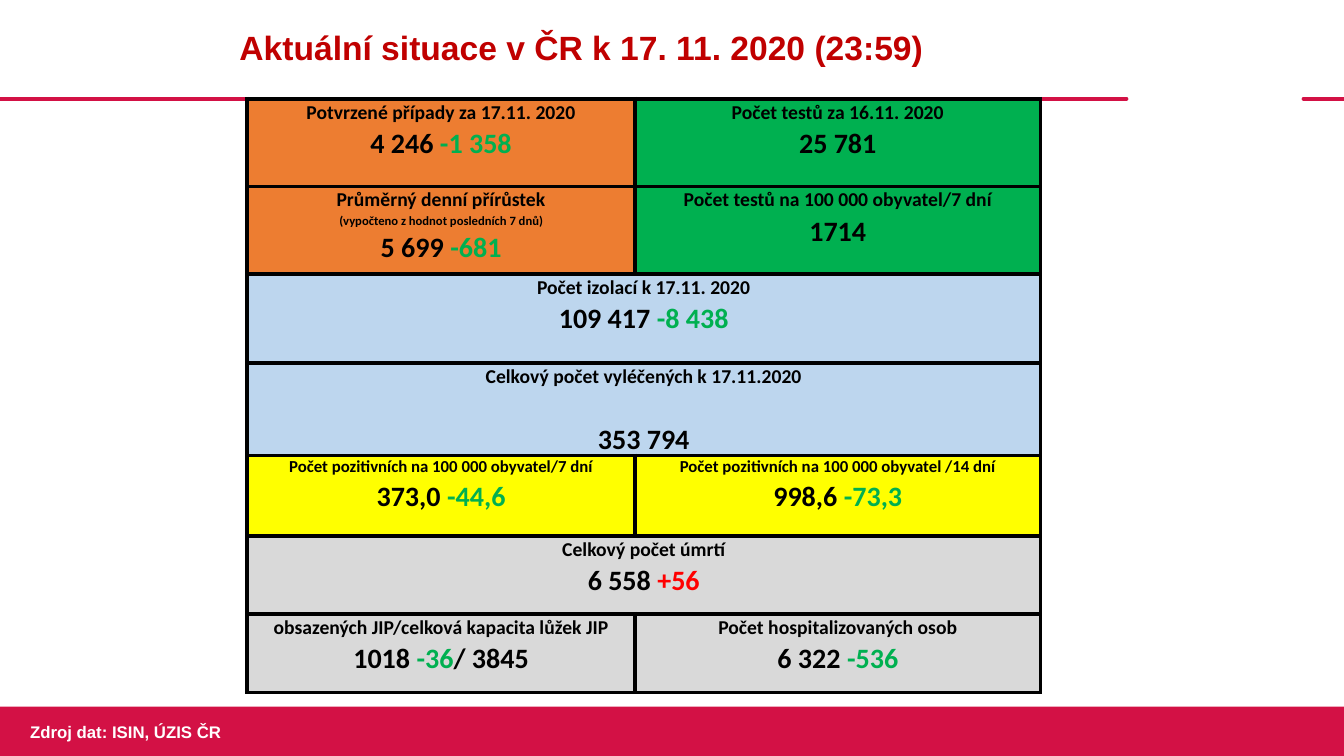
from dataclasses import dataclass

from lxml import etree
from pptx import Presentation
from pptx.dml.color import RGBColor
from pptx.enum.shapes import MSO_CONNECTOR, MSO_SHAPE
from pptx.enum.text import MSO_ANCHOR, PP_ALIGN
from pptx.oxml.ns import qn
from pptx.util import Inches, Pt

CENTER, LEFT = PP_ALIGN.CENTER, PP_ALIGN.LEFT
MIDDLE, TOP = MSO_ANCHOR.MIDDLE, MSO_ANCHOR.TOP
STRAIGHT, RECT = MSO_CONNECTOR.STRAIGHT, MSO_SHAPE.RECTANGLE

CRIMSON = RGBColor(0xD3, 0x11, 0x45)
DARK_RED = RGBColor(0xC0, 0x00, 0x00)
RED = RGBColor(0xFF, 0x00, 0x00)
GREEN = RGBColor(0x00, 0xB0, 0x50)
ORANGE = RGBColor(0xED, 0x7D, 0x31)
BLUE = RGBColor(0xBD, 0xD6, 0xEE)
YELLOW = RGBColor(0xFF, 0xFF, 0x00)
GREY = RGBColor(0xD9, 0xD9, 0xD9)
BLACK = RGBColor(0x00, 0x00, 0x00)
WHITE = RGBColor(0xFF, 0xFF, 0xFF)

WIDTH, HEIGHT = Inches(13.33), Inches(7.5)
RULE_Y = 13.07  # height of the header rule, in percent
COLS = [28.88, 30.16]
ROWS = [11.6, 11.6, 11.73, 12.27, 10.67, 10.27, 10.4]


@dataclass
class Part:
    text: str
    color: RGBColor = BLACK


@dataclass
class Tile:
    row: int
    col: int
    fill: RGBColor
    label: str
    value: list[Part]
    label_size: int = 14
    note: str = ""
    wide: bool = False
    value_spacing: float = 1.07
    after: int = 0


TILES = [
    Tile(0, 0, ORANGE, "Potvrzené případy za 17.11. 2020",
         [Part("4 246 "), Part("-1 358", GREEN)], after=12),
    Tile(0, 1, GREEN, "Počet testů za 16.11. 2020", [Part("25 781")], after=12),
    Tile(1, 0, ORANGE, "Průměrný denní přírůstek",
         [Part("5 699 "), Part("-681", GREEN)],
         note="(vypočteno z hodnot posledních 7 dnů)"),
    Tile(1, 1, GREEN, "Počet testů na 100 000 obyvatel/7 dní", [Part("1714")]),
    Tile(2, 0, BLUE, "Počet izolací k 17.11. 2020",
         [Part("109 417 "), Part("-8 438", GREEN)], wide=True),
    Tile(3, 0, BLUE, "Celkový počet vyléčených k 17.11.2020",
         [Part("353 794")], wide=True, value_spacing=2.0),
    Tile(4, 0, YELLOW, "Počet pozitivních na 100 000 obyvatel/7 dní",
         [Part("373,0 "), Part("-44,6", GREEN)], label_size=12),
    Tile(4, 1, YELLOW, "Počet pozitivních na 100 000 obyvatel /14 dní",
         [Part("998,6 "), Part("-73,3", GREEN)], label_size=12),
    Tile(5, 0, GREY, "Celkový počet úmrtí",
         [Part("6 558 "), Part("+56", RED)], wide=True),
    Tile(6, 0, GREY, "obsazených JIP/celková kapacita lůžek JIP",
         [Part("1018 "), Part("-36", GREEN), Part("/ 3845")]),
    Tile(6, 1, GREY, "Počet hospitalizovaných osob",
         [Part("6 322 "), Part("-536", GREEN)]),
]


def across(percent: float) -> int:
    return round(WIDTH * percent / 100)


def down(percent: float) -> int:
    return round(HEIGHT * percent / 100)


def write(p, parts: list[Part], size: int, font: str, align=CENTER,
          spacing: float = 1.0, after: int = 0) -> None:
    p.alignment = align
    p.line_spacing = spacing
    p.space_before, p.space_after = Pt(0), Pt(after)
    for part in parts:
        r = p.add_run()
        r.text = part.text
        r.font.name, r.font.size, r.font.bold = font, Pt(size), True
        r.font.color.rgb = part.color


def add_rule(slide, start: float, end: float) -> None:
    s = slide.shapes.add_connector(
        STRAIGHT, across(start), down(RULE_Y), across(end), down(RULE_Y))
    s.line.color.rgb = CRIMSON
    s.line.width = Pt(3)
    sp = s.element.spPr
    sp.find(qn("a:ln")).set("cap", "rnd")
    etree.SubElement(sp, qn("a:effectLst"))


def add_borders(cell) -> None:
    tc_pr = cell._tc.get_or_add_tcPr()
    for side in ("lnL", "lnR", "lnT", "lnB"):
        ln = etree.SubElement(tc_pr, qn(f"a:{side}"), w=str(Pt(3)))
        fill = etree.SubElement(ln, qn("a:solidFill"))
        etree.SubElement(fill, qn("a:srgbClr"), val=str(BLACK))


def fill_tile(table, tile: Tile) -> None:
    cell = table.cell(tile.row, tile.col)
    if tile.wide:
        cell.merge(table.cell(tile.row, len(COLS) - 1))
    cell.fill.solid()
    cell.fill.fore_color.rgb = tile.fill
    cell.margin_left = cell.margin_right = Inches(0.04)
    cell.margin_top = cell.margin_bottom = 0
    cell.vertical_anchor = TOP
    tf = cell.text_frame
    write(tf.paragraphs[0], [Part(tile.label)], tile.label_size, "Calibri",
          spacing=1.07)
    if tile.note:
        write(tf.add_paragraph(), [Part(tile.note)], 9, "Calibri", spacing=1.07)
    write(tf.add_paragraph(), tile.value, 20, "Calibri",
          spacing=tile.value_spacing, after=tile.after)


def main() -> None:
    prs = Presentation()
    prs.slide_width, prs.slide_height = WIDTH, HEIGHT
    slide = prs.slides.add_slide(prs.slide_layouts[5])

    # Header rule and footer band
    add_rule(slide, 0, 83.8)
    add_rule(slide, 97, 100)
    band = slide.shapes.add_shape(RECT, 0, down(93.47), WIDTH, down(6.53))
    band.shadow.inherit = False
    band.fill.solid()
    band.fill.fore_color.rgb = CRIMSON
    band.line.fill.background()

    # Title
    title = slide.shapes.title
    title.left, title.top = across(2.7), 0
    title.width, title.height = across(81.1), down(RULE_Y)
    tf = title.text_frame
    tf.word_wrap = True
    tf.vertical_anchor = MIDDLE
    write(tf.paragraphs[0],
          [Part("Aktuální situace v ČR k 17. 11. 2020 (23:59)", DARK_RED)],
          24, "Arial", spacing=0.9)

    # Data source
    source = slide.shapes.add_textbox(across(1.5), down(94.8), across(16.8), down(4))
    source.text_frame.word_wrap = True
    write(source.text_frame.paragraphs[0],
          [Part("Zdroj dat: ISIN, ÚZIS ČR", WHITE)], 12, "Arial", align=LEFT)

    # Table of figures
    table = slide.shapes.add_table(
        len(ROWS), len(COLS), across(18.38), down(RULE_Y),
        across(sum(COLS)), down(sum(ROWS))).table
    table.first_row = table.horz_banding = False
    for column, share in zip(table.columns, COLS):
        column.width = across(share)
    for row, share in zip(table.rows, ROWS):
        row.height = down(share)
    for cell in table.iter_cells():
        add_borders(cell)
    for tile in TILES:
        fill_tile(table, tile)

    prs.save("out.pptx")


if __name__ == "__main__":
    main()
